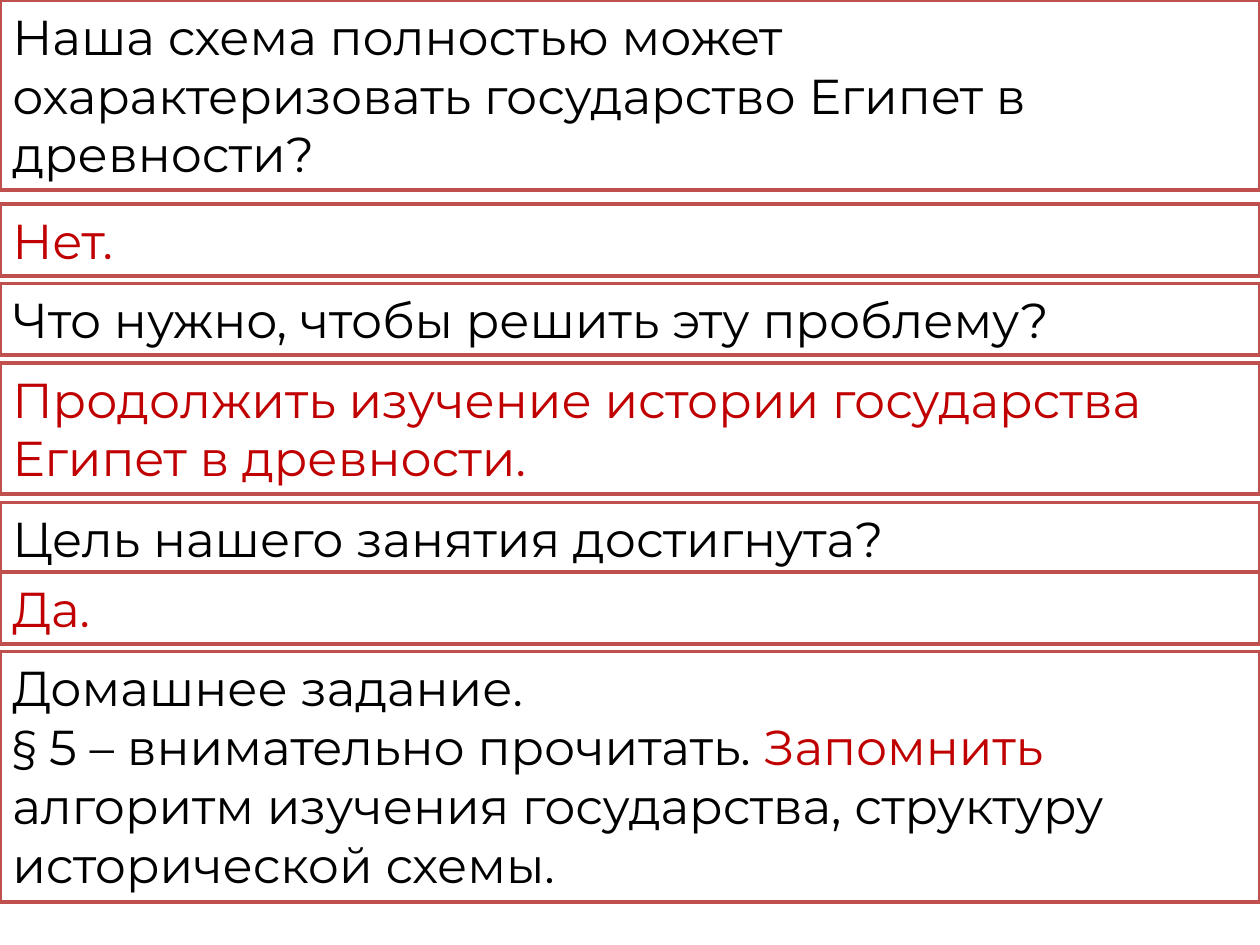
"""Build a lesson summary slide of stacked question and answer boxes."""
from dataclasses import dataclass

from pptx import Presentation
from pptx.dml.color import RGBColor
from pptx.enum import shapes, text
from pptx.util import Inches, Pt


@dataclass(frozen=True)
class Theme:
    """Colours, font and sizes of the slide."""
    font: str = "Montserrat"
    size: Pt = Pt(28)
    line_width: Pt = Pt(2)
    fill: RGBColor = RGBColor(0xFF, 0xFF, 0xFF)
    border: RGBColor = RGBColor(0xC0, 0x50, 0x4D)
    question: RGBColor = RGBColor(0x00, 0x00, 0x00)
    answer: RGBColor = RGBColor(0xC0, 0x00, 0x00)


THEME = Theme()
PAGE_WIDTH, PAGE_HEIGHT = 10, 7.5
HEIGHT_BY_LINES = {1: 0.57, 2: 1.04, 3: 1.51, 4: 1.99}

DIALOGUE = [
    (0, 3, "Наша схема полностью может охарактеризовать государство Египет в древности?",
     THEME.question),
    (1.62, 1, "Нет.", THEME.answer),
    (2.25, 1, "Что нужно, чтобы решить эту проблему?", THEME.question),
    (2.88, 2, "Продолжить изучение истории государства Египет в древности.", THEME.answer),
    (3.99, 1, "Цель нашего занятия достигнута?", THEME.question),
    (4.54, 1, "Да.", THEME.answer),
]
HOMEWORK = [
    [("Домашнее задание.", THEME.question)],
    [("§ 5 – внимательно прочитать. ", THEME.question),
     ("Запомнить", THEME.answer),
     (" алгоритм изучения государства, структуру исторической схемы.", THEME.question)],
]


def add_span(para, wording, colour):
    """Add one run in the theme font and the given colour."""
    span = para.add_run()
    span.text = wording
    span.font.name = THEME.font
    span.font.size = THEME.size
    span.font.color.rgb = colour


def add_box(page, top, lines, paragraphs):
    """Add a full-width bordered box holding paragraphs of coloured runs."""
    box = page.shapes.add_shape(
        shapes.MSO_SHAPE.RECTANGLE, Inches(0), Inches(top),
        Inches(PAGE_WIDTH), Inches(HEIGHT_BY_LINES[lines]))
    box.shadow.inherit = False
    box.fill.solid()
    box.fill.fore_color.rgb = THEME.fill
    box.line.color.rgb = THEME.border
    box.line.width = THEME.line_width
    frame = box.text_frame
    frame.word_wrap = True
    frame.auto_size = text.MSO_AUTO_SIZE.SHAPE_TO_FIT_TEXT
    frame.vertical_anchor = text.MSO_ANCHOR.TOP
    for index, spans in enumerate(paragraphs):
        para = frame.add_paragraph() if index else frame.paragraphs[0]
        para.alignment = text.PP_ALIGN.LEFT
        for wording, colour in spans:
            add_span(para, wording, colour)


def main():
    """Build and save the deck."""
    deck = Presentation()
    deck.slide_width = Inches(PAGE_WIDTH)
    deck.slide_height = Inches(PAGE_HEIGHT)
    page = deck.slides.add_slide(deck.slide_layouts[6])
    for top, lines, wording, colour in DIALOGUE:
        add_box(page, top, lines, [[(wording, colour)]])
    add_box(page, 5.17, 4, HOMEWORK)
    deck.save("out.pptx")


if __name__ == "__main__":
    main()
